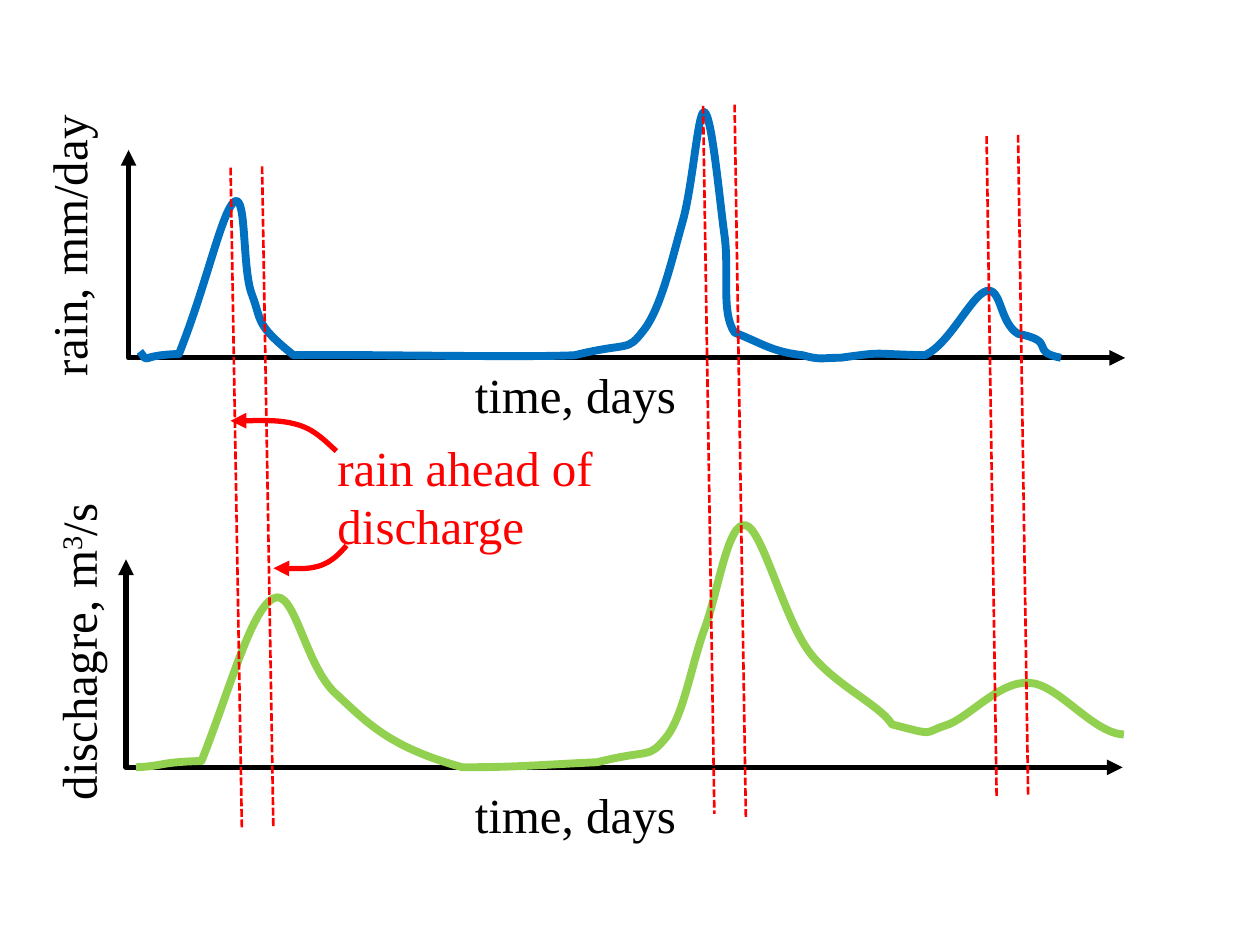
from pptx import Presentation
from pptx.dml.color import RGBColor
from pptx.enum.dml import MSO_LINE
from pptx.enum.shapes import MSO_CONNECTOR
from pptx.enum.text import MSO_AUTO_SIZE
from pptx.oxml.ns import qn
from pptx.oxml.xmlchemy import OxmlElement
from pptx.util import Inches, Pt

BLACK = RGBColor(0x00, 0x00, 0x00)
RED = RGBColor(0xFF, 0x00, 0x00)
BLUE = RGBColor(0x00, 0x70, 0xC0)
GREEN = RGBColor(0x92, 0xD0, 0x50)
FONT = "Times New Roman"

# Each curve: a start point, then Bezier segments (control, control, end)
RAIN = [
    (1.11, 2.79),
    (1.2, 2.9), (1.07, 2.82), (1.42, 2.81),
    (1.64, 2.26), (1.76, 1.68), (1.86, 1.6),
    (1.96, 1.53), (1.92, 2.14), (2, 2.34),
    (2.08, 2.55), (2.02, 2.57), (2.33, 2.82),
    (2.77, 2.81), (4.12, 2.84), (4.56, 2.82),
    (5.01, 2.71), (4.97, 2.8), (5.11, 2.62),
    (5.25, 2.44), (5.34, 2.03), (5.42, 1.75),
    (5.5, 1.46), (5.54, 0.87), (5.59, 0.89),
    (5.65, 0.91), (5.71, 1.58), (5.75, 1.87),
    (5.79, 2.16), (5.72, 2.48), (5.83, 2.64),
    (6.06, 2.73), (6.12, 2.79), (6.37, 2.82),
    (6.52, 2.86), (6.51, 2.84), (6.67, 2.84),
    (7.04, 2.79), (6.89, 2.81), (7.34, 2.82),
    (7.54, 2.73), (7.71, 2.34), (7.83, 2.31),
    (7.95, 2.28), (7.93, 2.56), (8.08, 2.65),
    (8.4, 2.71), (8.16, 2.79), (8.42, 2.84),
]
DISCHARGE = [
    (1.08, 6.09),
    (1.31, 6.08), (1.25, 6.05), (1.6, 6.04),
    (1.82, 5.49), (1.99, 4.84), (2.17, 4.75),
    (2.34, 4.66), (2.42, 5.29), (2.67, 5.51),
    (2.92, 5.74), (3.09, 5.93), (3.67, 6.09),
    (4.11, 6.09), (4.3, 6.07), (4.74, 6.05),
    (5.18, 5.94), (5.14, 6.03), (5.29, 5.85),
    (5.43, 5.67), (5.49, 5.26), (5.6, 4.97),
    (5.7, 4.69), (5.78, 4.13), (5.92, 4.17),
    (6.05, 4.2), (6.22, 4.9), (6.42, 5.17),
    (6.61, 5.43), (6.98, 5.59), (7.08, 5.75),
    (7.43, 5.84), (7.32, 5.82), (7.5, 5.76),
    (7.68, 5.71), (7.93, 5.4), (8.17, 5.42),
    (8.4, 5.43), (8.67, 5.82), (8.92, 5.83),
]
UPPER_ARROW = [(1.83, 3.34), (2.03, 3.34), (2.22, 3.33), (2.36, 3.37),
               (2.5, 3.41), (2.58, 3.5), (2.67, 3.58)]
LOWER_ARROW = [(2.17, 4.51), (2.3, 4.51), (2.44, 4.52), (2.54, 4.49),
               (2.63, 4.46), (2.69, 4.4), (2.75, 4.33)]

# Peak markers: top x, top y, bottom x, bottom y
PEAKS = [(1.83, 1.33, 1.92, 6.58), (2.08, 1.32, 2.17, 6.57),
         (5.58, 0.84, 5.67, 6.46), (5.83, 0.83, 5.92, 6.5),
         (7.83, 1.08, 7.91, 6.33), (8.08, 1.07, 8.16, 6.32)]


def add_outline(s, points, color, width, ends=()):
    """Draw an open line; ends holds "headEnd" and/or "tailEnd"."""
    points = [(Inches(x), Inches(y)) for x, y in points]
    builder = s.shapes.build_freeform(*points[0])
    builder.add_line_segments(points[1:], close=False)
    sp = builder.convert_to_shape()
    sp.shadow.inherit = False
    sp.fill.background()
    sp.line.color.rgb = color
    sp.line.width = Pt(width)
    for end in ends:
        arrow = OxmlElement(f"a:{end}")
        arrow.set("type", "triangle")
        sp.line._get_or_add_ln().append(arrow)
    return sp


def add_curve(s, points, color, width, ends=()):
    """Draw an outline and turn every three line steps into one Bezier."""
    sp = add_outline(s, points, color, width, ends)
    steps = list(sp._element.iter(qn("a:lnTo")))
    for i in range(0, len(steps), 3):
        bezier = OxmlElement("a:cubicBezTo")
        steps[i].addprevious(bezier)
        for step in steps[i:i + 3]:
            bezier.append(step[0])
            step.getparent().remove(step)


def add_axes(s, x, y):
    add_outline(s, [(x, y), (x, y + 1.65), (x + 7.91, y + 1.65)], BLACK, 3,
                ["headEnd", "tailEnd"])


def add_marker(s, *ends):
    line = s.shapes.add_connector(MSO_CONNECTOR.STRAIGHT, *map(Inches, ends))
    line.line.color.rgb = RED
    line.line.width = Pt(1.5)
    line.line.dash_style = MSO_LINE.SQUARE_DOT
    line._element.spPr.append(OxmlElement("a:effectLst"))


def add_text(s, text, x, y, w, h=0.57, color=BLACK, rotation=0, superscript=""):
    """Add a label; the superscript string is raised where it occurs."""
    box = s.shapes.add_textbox(Inches(x), Inches(y), Inches(w), Inches(h))
    box.rotation = rotation
    tf = box.text_frame
    tf.word_wrap = True
    tf.auto_size = MSO_AUTO_SIZE.SHAPE_TO_FIT_TEXT
    for i, line in enumerate(text.split("\n")):
        p = tf.paragraphs[0] if i == 0 else tf.add_paragraph()
        parts = line.partition(superscript) if superscript else [line]
        for part in parts:
            r = p.add_run()
            r.text = part
            r.font.name = FONT
            r.font.size = Pt(28)
            r.font.color.rgb = color
            if part == superscript:
                r.font._element.set("baseline", "30000")


def main():
    prs = Presentation()
    prs.slide_width, prs.slide_height = Inches(10), Inches(7.5)
    s = prs.slides.add_slide(prs.slide_layouts[6])

    # Axes and their labels
    add_axes(s, 1.02, 1.19)
    add_axes(s, 1, 4.44)
    for y in (6.18, 2.84):
        add_text(s, "time, days", 3.67, y, 2)
    add_text(s, "rain, mm/day", -0.67, 1.59, 2.42, rotation=270)
    add_text(s, "dischagre, m3/s", -0.86, 4.69, 2.95, rotation=270, superscript="3")

    # Rain and discharge curves
    add_curve(s, RAIN, BLUE, 4.5)
    add_curve(s, DISCHARGE, GREEN, 4.5)

    # Peak markers
    for peak in PEAKS:
        add_marker(s, *peak)

    # Note with its two arrows
    add_text(s, "rain ahead of\ndischarge", 2.58, 3.42, 2.42, 1.04, color=RED)
    for arrow in (UPPER_ARROW, LOWER_ARROW):
        add_curve(s, arrow, RED, 3, ["headEnd"])

    prs.save("out.pptx")


if __name__ == "__main__":
    main()
